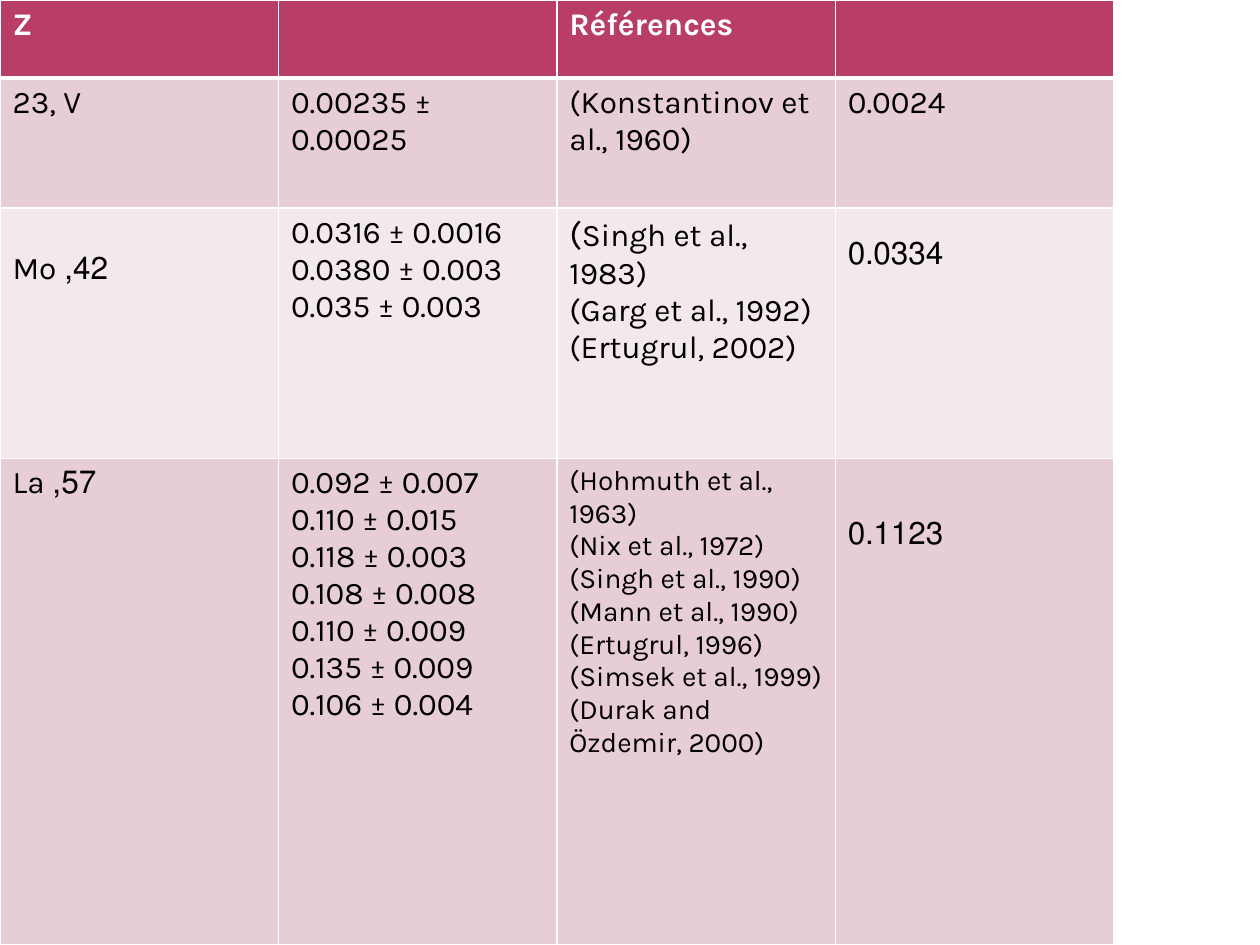
"""Builds a slide with a table of measured values, references and results by element."""
from pptx import Presentation
from pptx.dml.color import RGBColor
from pptx.enum.text import PP_ALIGN as Align
from pptx.oxml import parse_xml
from pptx.oxml.ns import nsdecls
from pptx.util import Inches, Pt

WHITE, BLACK = "FFFFFF", "000000"
HEAD, BAND, PALE = "B83D68", "E6CED4", "F3E8EB"


def rgb(value):
    return RGBColor.from_string(value)


class Deck:
    font = "Karla"

    def __init__(self, prs):
        self.s = prs.slides.add_slide(prs.slide_layouts[6])

    def border(self, cell, side, width):
        cell._tc.get_or_add_tcPr().append(parse_xml(
            f'<a:ln{side} {nsdecls("a")} w="{Pt(width)}"><a:solidFill>'
            f'<a:srgbClr val="{WHITE}"/></a:solidFill></a:ln{side}>'))

    def paragraph(self, p, runs, color, bold, rtl):
        p.alignment = Align.LEFT
        if rtl:
            p._p.get_or_add_pPr().set("rtl", "1")
        for text, size in runs:
            r = p.add_run()
            r.text = text
            r.font.color.rgb = rgb(color)
            formats = {"name": self.font, "size": Pt(size), "bold": bold}
            for key, value in formats.items():
                setattr(r.font, key, value)

    def cell(self, cell, lines, fill, color=BLACK, size=18, bold=False,
             rtl=False, top=0.05, bottom=1):
        for side, width in zip("LRTB", (1, 1, 1, bottom)):
            self.border(cell, side, width)
        cell.fill.solid()
        cell.fill.fore_color.rgb = rgb(fill)
        cell.margin_top = Inches(top)
        tf = cell.text_frame
        for i, line in enumerate(lines):
            p = tf.add_paragraph() if i else tf.paragraphs[0]
            runs = [(line, size)] if isinstance(line, str) else line
            self.paragraph(p, runs, color, bold, rtl)

    def table(self, rows, heights, col_width):
        n = len(rows[0])
        sp = self.s.shapes.add_table(len(rows), n, 0, 0, Inches(col_width * n),
                                     Inches(sum(heights)))
        for col in sp.table.columns:
            col.width = Inches(col_width)
        for row, height, cells in zip(sp.table.rows, heights, rows):
            row.height = Inches(height)
            for cell, (lines, style) in zip(row.cells, cells):
                self.cell(cell, lines, **style)


def main():
    prs = Presentation()
    prs.slide_width, prs.slide_height = Inches(10), Inches(7.5)

    head = {"fill": HEAD, "color": WHITE, "bold": True, "rtl": True, "bottom": 3}
    band, pale = {"fill": BAND}, {"fill": PALE}
    rows = [
        [([title] if title else [], head) for title in ("Z", "", "Références", "")],
        [([text], band) for text in ("23, V", "0.00235 ± 0.00025",
                                     "(Konstantinov et al., 1960)", "0.0024")],
        [(["42, Mo"], {**pale, "rtl": True, "top": 0.34}),
         (["0.0316 ± 0.0016", "0.0380 ± 0.003", "0.035 ± 0.003"], pale),
         ([[("(", 20), ("Singh et al., 1983)", 18)],
           "(Garg et al., 1992)", "(Ertugrul, 2002)"], pale),
         (["0.0334"], {**pale, "rtl": True, "top": 0.25})],
        [(["57, La"], {**band, "rtl": True}),
         (["0.092 ± 0.007", "0.110 ± 0.015", "0.118 ± 0.003", "0.108 ± 0.008",
           "0.110 ± 0.009", "0.135 ± 0.009", "0.106 ± 0.004"], band),
         (["(Hohmuth et al., 1963)", "(Nix et al., 1972)", "(Singh et al., 1990)",
           "(Mann et al., 1990)", "(Ertugrul, 1996)", "(Simsek et al., 1999)",
           "(Durak and Özdemir, 2000)"], {**band, "size": 16}),
         (["0.1123"], {**band, "rtl": True, "top": 0.48})],
    ]
    Deck(prs).table(rows, heights=(0.62, 1.03, 1.99, 3.86), col_width=2.21)
    prs.save("out.pptx")


if __name__ == "__main__":
    main()
